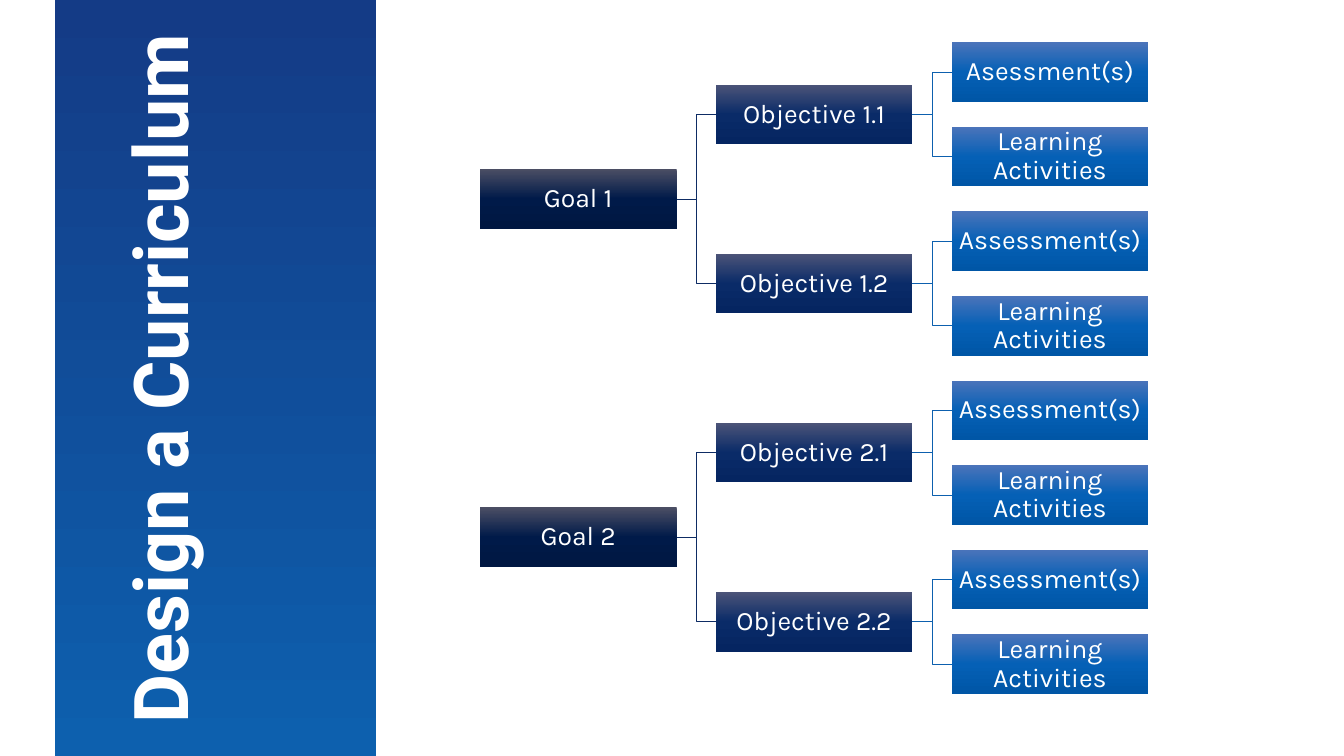
from dataclasses import dataclass, field
from typing import List, Optional

from lxml import etree
from pptx import Presentation
from pptx.dml.color import RGBColor
from pptx.enum import shapes, text
from pptx.oxml.ns import qn
from pptx.util import Pt

COLORS = {
    "white": "FFFFFF",
    "band_top": "143B86", "band_bottom": "0D60AE",
    "goal_top": "4B4E64", "goal_mid": "001A49", "goal_bottom": "001741",
    "objective_top": "4C5478", "objective_mid": "0A2B68", "objective_bottom": "052561",
    "activity_top": "4B74BA", "activity_mid": "0560B6", "activity_bottom": "0056A6",
    "objective_link": "0E2C64", "activity_link": "0D60AE",
}
LEVELS = ["goal", "objective", "activity"]

TREE_LEFT, TREE_TOP = 342.7, 30.2
BOX_WIDTH, BOX_HEIGHT = 140.6, 42.6
COLUMN_PITCH, ROW_PITCH = 168.5, 60.4


@dataclass
class Node:
    label: str
    children: List["Node"] = field(default_factory=list)
    row: float = 0


def objective(label: str, assessment: str = "Assessment(s)") -> Node:
    return Node(label, [Node(assessment), Node("Learning Activities")])


GOALS = [
    Node("Goal 1", [objective("Objective 1.1", "Asessment(s)"), objective("Objective 1.2")]),
    Node("Goal 2", [objective("Objective 2.1"), objective("Objective 2.2")]),
]


def assign_rows(node: Node, first_row: int) -> int:
    """Centre each parent on its children; return the next free row."""
    if not node.children:
        node.row = first_row
        return first_row + 1
    for child in node.children:
        first_row = assign_rows(child, first_row)
    node.row = (node.children[0].row + node.children[-1].row) / 2
    return first_row


def set_gradient(shape, names: List[str]) -> None:
    """Fill from top to bottom with evenly spaced colours."""
    shape.fill.gradient()
    shape.fill.gradient_angle = 270
    stops = shape._element.spPr.find(".//" + qn("a:gsLst"))
    for stop in list(stops):
        stops.remove(stop)
    for index, name in enumerate(names):
        position = str(100000 * index // (len(names) - 1))
        stop = etree.SubElement(stops, qn("a:gs"), pos=position)
        etree.SubElement(stop, qn("a:srgbClr"), val=COLORS[name])


def add_gradient_box(slide, left: float, top: float, width: float, height: float,
                     names: List[str]):
    box = slide.shapes.add_shape(
        shapes.MSO_SHAPE.RECTANGLE, Pt(left), Pt(top), Pt(width), Pt(height))
    box.shadow.inherit = False
    box.line.fill.background()
    set_gradient(box, names)
    return box


def write(shape, words: str, *, font: str, size: float, bold: bool = False,
          anchor=text.MSO_ANCHOR.MIDDLE, inset: Optional[float] = None,
          spacing: float = 1.0) -> None:
    frame = shape.text_frame
    frame.word_wrap = True
    frame.vertical_anchor = anchor
    if inset is not None:
        frame.margin_left = frame.margin_right = Pt(inset)
        frame.margin_top = frame.margin_bottom = Pt(inset)
    paragraph = frame.paragraphs[0]
    paragraph.alignment = text.PP_ALIGN.CENTER
    paragraph.line_spacing = spacing
    run = paragraph.add_run()
    run.text = words
    run.font.name = font
    run.font.size = Pt(size)
    run.font.bold = bold
    run.font.color.rgb = RGBColor.from_string(COLORS["white"])


def link(slide, parent, child, color: str) -> None:
    """Join a parent's right side to a child's left side with an elbow."""
    elbow = slide.shapes.add_connector(
        shapes.MSO_CONNECTOR.ELBOW,
        parent.left + parent.width, parent.top + parent.height // 2,
        child.left, child.top + child.height // 2)
    elbow.begin_connect(parent, 3)
    elbow.end_connect(child, 1)
    elbow.line.color.rgb = RGBColor.from_string(COLORS[color])
    elbow.line.width = Pt(0.5)
    etree.SubElement(elbow._element.spPr, qn("a:effectLst"))


def draw_branch(slide, node: Node, depth: int = 0):
    level = LEVELS[depth]
    box = add_gradient_box(
        slide, TREE_LEFT + depth * COLUMN_PITCH, TREE_TOP + node.row * ROW_PITCH,
        BOX_WIDTH, BOX_HEIGHT, [f"{level}_{part}" for part in ("top", "mid", "bottom")])
    write(box, node.label, font="Karla", size=19, inset=0.75, spacing=0.9)
    for child in node.children:
        child_box = draw_branch(slide, child, depth + 1)
        link(slide, box, child_box, f"{LEVELS[depth + 1]}_link")
    return box


def main() -> None:
    deck = Presentation()
    deck.slide_width, deck.slide_height = Pt(960), Pt(540)
    slide = deck.slides.add_slide(deck.slide_layouts[6])

    add_gradient_box(slide, 39.2, 0, 229.5, 540, ["band_top", "band_bottom"])

    next_row = 0
    for goal in GOALS:
        next_row = assign_rows(goal, next_row)
        draw_branch(slide, goal)

    title = slide.shapes.add_textbox(Pt(-90.7), Pt(168.5), Pt(540), Pt(203.8))
    title.rotation = 270
    write(title, "Design a Curriculum", font="Roboto", size=54, bold=True,
          anchor=text.MSO_ANCHOR.TOP)

    deck.save("out.pptx")


if __name__ == "__main__":
    main()
